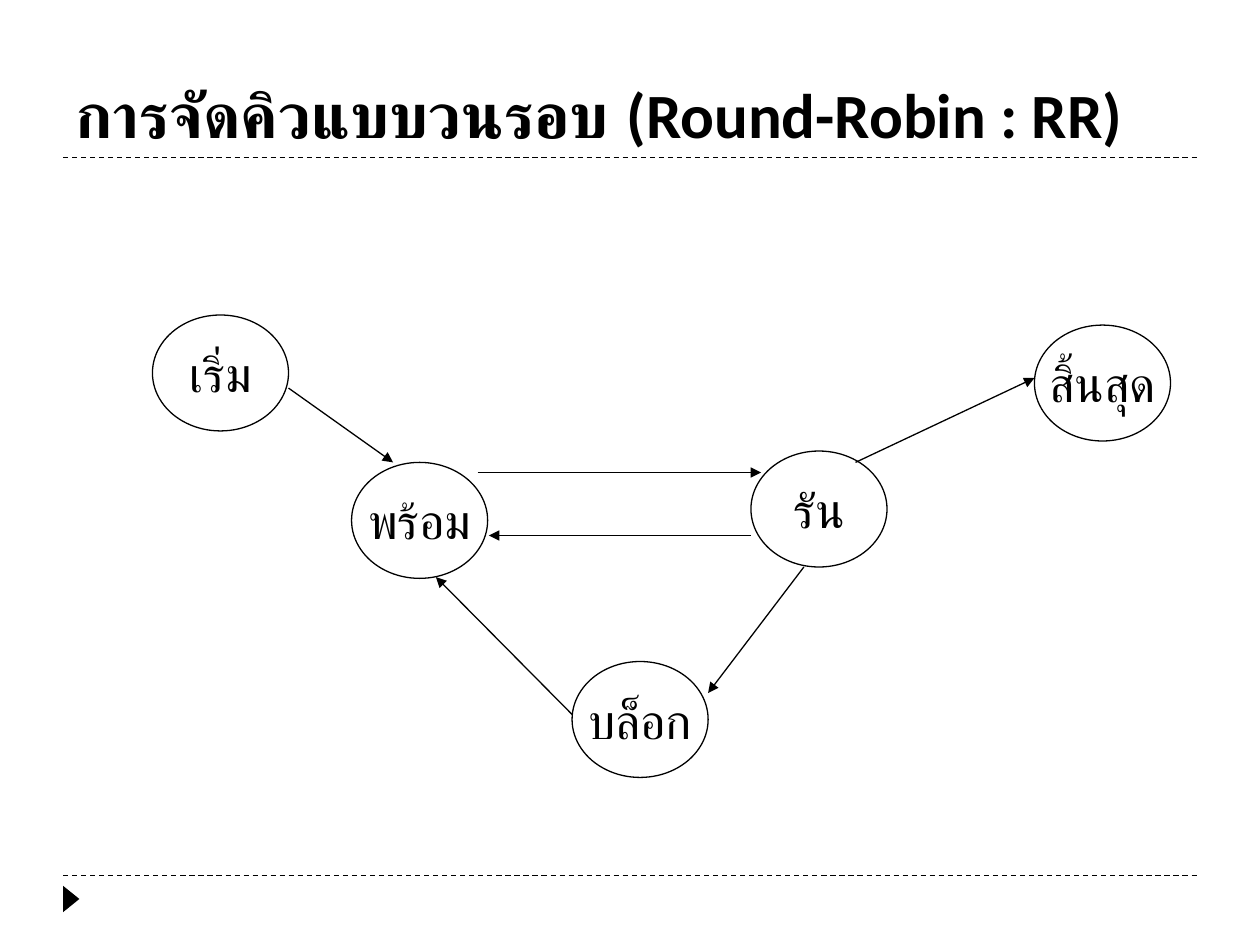
from collections import namedtuple

from lxml import etree
from pptx import Presentation
from pptx import util as u
from pptx.dml.color import RGBColor
from pptx.enum import dml, shapes, text
from pptx.oxml.ns import qn

BLACK = RGBColor(0, 0, 0)
FONT = "Calibri"
Box = namedtuple("Box", "left top width height")

STATE_WIDTH, STATE_HEIGHT = 1.08, 0.92
STATES = [
    ("เริ่ม", 0, 0),
    ("พร้อม", 1.58, 1.17),
    ("รัน", 4.75, 1.08),
    ("บล็อก", 3.33, 2.75),
    ("สิ้นสุด", 7, 0.08),
]
TRANSITIONS = [
    ((1.08, 0.58), (1.91, 1.17)),
    ((2.58, 1.25), (4.83, 1.25)),
    ((4.75, 1.75), (2.67, 1.75)),
    ((5.17, 2), (4.41, 3)),
    ((3.33, 3.17), (2.25, 2.08)),
    ((5.58, 1.17), (7, 0.5)),
]


def format_font(font, size, bold=False):
    font.name = FONT
    font.size = u.Pt(size)
    font.bold = bold
    font.color.rgb = BLACK


def add_line(page, box, start, end, dashed=False, arrow=False):
    line = page.shapes.add_connector(
        shapes.MSO_CONNECTOR.STRAIGHT,
        u.Inches(box.left + start[0]), u.Inches(box.top + start[1]),
        u.Inches(box.left + end[0]), u.Inches(box.top + end[1]),
    )
    line.line.color.rgb = BLACK
    line.line.width = u.Pt(0.75)
    if dashed:
        line.line.dash_style = dml.MSO_LINE.DASH
    properties = line._element.spPr
    if arrow:
        outline = properties.find(qn("a:ln"))
        etree.SubElement(outline, qn("a:tailEnd"), type="triangle")
    etree.SubElement(properties, qn("a:effectLst"))


def add_title(page, box, wording):
    title = page.shapes.title
    title.left, title.top, title.width, title.height = map(u.Inches, box)
    frame = title.text_frame
    frame.word_wrap = True
    frame.vertical_anchor = text.MSO_ANCHOR.BOTTOM
    para = frame.paragraphs[0]
    para.text = wording
    para.alignment = text.PP_ALIGN.LEFT
    format_font(para.font, 36, bold=True)
    add_line(page, box, (0, box.height), (box.width, box.height), dashed=True)


def add_footer(page, box):
    add_line(page, box, (0, 0), (box.width, 0), dashed=True)
    marker = page.shapes.add_shape(
        shapes.MSO_SHAPE.ISOSCELES_TRIANGLE,
        u.Inches(box.left - 0.04), u.Inches(box.top + 0.12),
        u.Inches(0.21), u.Inches(0.13),
    )
    marker.rotation = 90
    marker.shadow.inherit = False
    marker.fill.solid()
    marker.fill.fore_color.rgb = BLACK
    marker.line.fill.background()


def add_state(page, box, label):
    state = page.shapes.add_shape(shapes.MSO_SHAPE.OVAL, *map(u.Inches, box))
    state.shadow.inherit = False
    state.fill.background()
    state.line.color.rgb = BLACK
    state.line.width = u.Pt(0.75)
    frame = state.text_frame
    frame.word_wrap = False
    frame.vertical_anchor = text.MSO_ANCHOR.MIDDLE
    para = frame.paragraphs[0]
    para.text = label
    para.alignment = text.PP_ALIGN.CENTER
    format_font(para.font, 28)


def add_state_diagram(page, box):
    for label, left, top in STATES:
        place = Box(box.left + left, box.top + top, STATE_WIDTH, STATE_HEIGHT)
        add_state(page, place, label)
    for start, end in TRANSITIONS:
        add_line(page, box, start, end, arrow=True)


def main():
    deck = Presentation()
    deck.slide_width = u.Inches(10)
    deck.slide_height = u.Inches(7.5)
    page = deck.slides.add_slide(deck.slide_layouts[5])
    add_footer(page, Box(0.5, 6.95, 9, 0.5))
    add_title(page, Box(0.5, 0.17, 9, 1.08), "การจัดคิวแบบวนรอบ (Round-Robin : RR)")
    add_state_diagram(page, Box(1.21, 2.5, 8.08, 3.67))
    deck.save("out.pptx")


if __name__ == "__main__":
    main()
